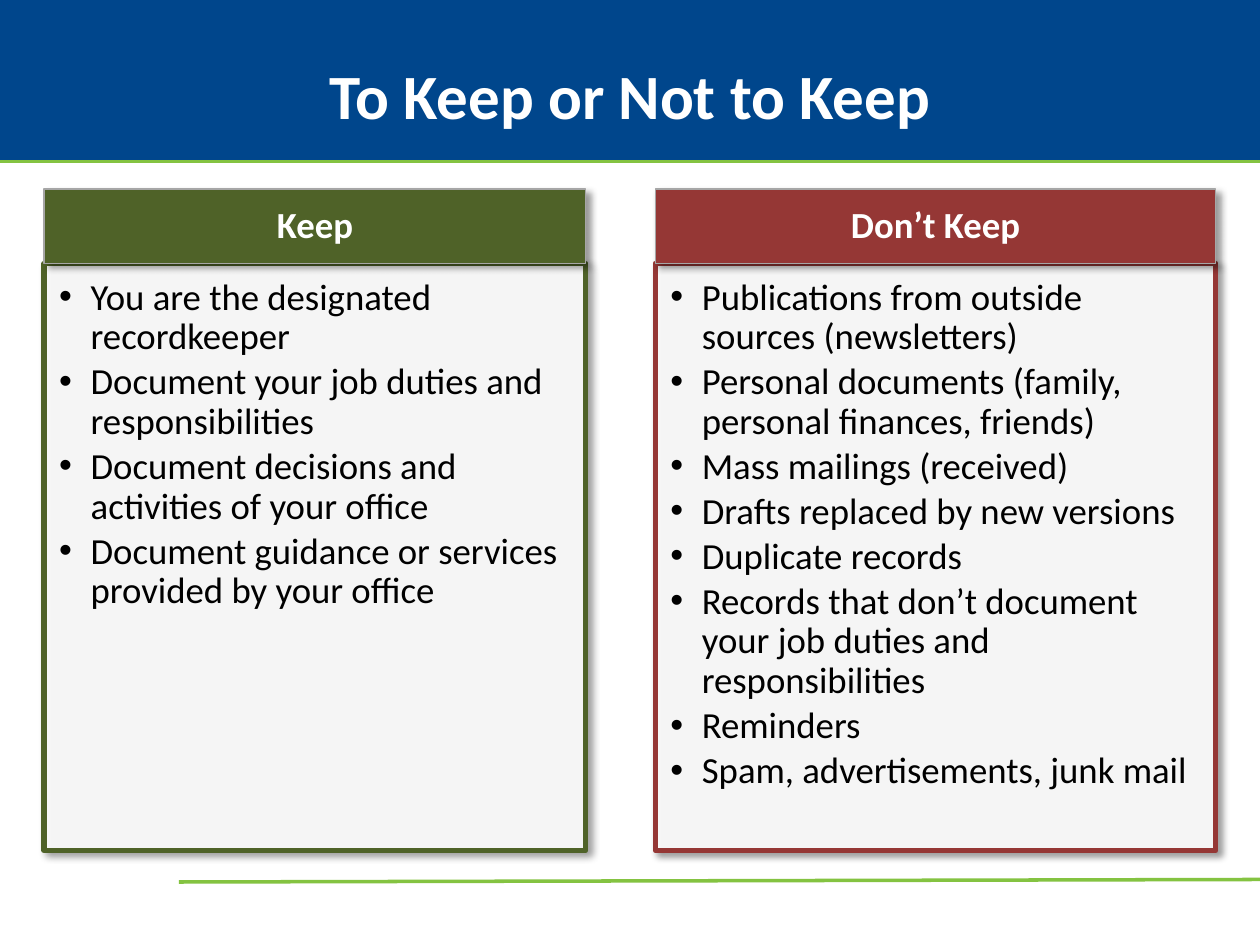
from dataclasses import dataclass

from lxml.etree import SubElement
from pptx import Presentation
from pptx.dml.color import RGBColor
from pptx.enum.shapes import MSO_CONNECTOR, MSO_SHAPE
from pptx.enum.text import MSO_ANCHOR, PP_ALIGN
from pptx.oxml.ns import qn
from pptx.util import Inches, Pt


@dataclass(frozen=True)
class Theme:
    font: str = "Calibri"
    title_size: int = 36
    text_size: int = 21
    navy: str = "00468C"
    lime: str = "84C341"
    olive: str = "4F6228"
    brick: str = "953735"
    grey: str = "A6A6A6"
    white: str = "FFFFFF"
    black: str = "000000"


THEME = Theme()
WIDTH, HEIGHT = 10, 7.5
HEAD_TOP, BODY_TOP, BODY_END = 1.5, 2.09, 6.75
COLUMNS = [
    (0.35, 4.3, THEME.olive, "Keep", [
        "You are the designated recordkeeper",
        "Document your job duties and responsibilities",
        "Document decisions and activities of your office",
        "Document guidance or services provided by your office",
    ]),
    (5.2, 4.45, THEME.brick, "Don’t Keep", [
        "Publications from outside sources (newsletters)",
        "Personal documents (family, personal finances, friends)",
        "Mass mailings (received)",
        "Drafts replaced by new versions",
        "Duplicate records",
        "Records that don’t document your job duties and responsibilities",
        "Reminders",
        "Spam, advertisements, junk mail",
    ]),
]


def apply(target, values):
    for name, value in values.items():
        setattr(target, name, value)


def add_text(p, text, size, color, bold=False):
    r = p.add_run()
    r.text = text
    apply(r.font, {"name": THEME.font, "size": Pt(size), "bold": bold})
    r.font.color.rgb = RGBColor.from_string(color)


def set_frame(tf, anchor, insets):
    sides = ("margin_left", "margin_top", "margin_right", "margin_bottom")
    apply(tf, dict(zip(sides, map(Inches, insets))))
    apply(tf, {"word_wrap": True, "vertical_anchor": anchor})


def set_line(line, color, width):
    line.color.rgb = RGBColor.from_string(color)
    line.width = Pt(width)


def add_rule(s, x1, y1, x2, y2):
    ln = s.shapes.add_connector(MSO_CONNECTOR.STRAIGHT, *map(Inches, (x1, y1, x2, y2)))
    set_line(ln.line, THEME.lime, 2)
    SubElement(ln._element.spPr, qn("a:effectLst"))


def add_box(s, x, y, w, h, fill):
    sp = s.shapes.add_shape(MSO_SHAPE.RECTANGLE, *map(Inches, (x, y, w, h)))
    sp.shadow.inherit = False
    sp.fill.solid()
    sp.fill.fore_color.rgb = RGBColor.from_string(fill)
    return sp


def add_alpha(color, percent):
    SubElement(color, qn("a:alpha"), val=str(percent * 1000))


def add_shadow(sp):
    effects = sp._element.spPr.find(qn("a:effectLst"))
    shadow = SubElement(effects, qn("a:outerShdw"), blurRad=str(Pt(4)), dist=str(Pt(3)),
                        dir=str(45 * 60000), algn="tl", rotWithShape="0")
    add_alpha(SubElement(shadow, qn("a:srgbClr"), val=THEME.black), 40)


def add_bullet(p):
    pPr = p._p.get_or_add_pPr()
    pPr.set("marL", str(Inches(0.25)))
    pPr.set("indent", str(-Inches(0.25)))
    SubElement(pPr, qn("a:buFont"), typeface="Arial")
    SubElement(pPr, qn("a:buChar"), char="•")


def add_body(s, x, w, color, items):
    sp = add_box(s, x, BODY_TOP, w, BODY_END - BODY_TOP, THEME.white)
    add_alpha(sp._element.spPr.find(qn("a:solidFill"))[0], 90)
    set_line(sp.line, color, 3)
    add_shadow(sp)
    tf = sp.text_frame
    set_frame(tf, MSO_ANCHOR.TOP, (0.12, 0.12, 0.16, 0.18))
    for i, item in enumerate(items):
        p = tf.add_paragraph() if i else tf.paragraphs[0]
        add_bullet(p)
        apply(p, {"alignment": PP_ALIGN.LEFT, "line_spacing": 0.9, "space_after": Pt(3)})
        add_text(p, item, THEME.text_size, THEME.black)


def add_header(s, x, w, color, label):
    sp = add_box(s, x, HEAD_TOP, w, BODY_TOP - HEAD_TOP, color)
    set_line(sp.line, THEME.grey, 0.75)
    add_shadow(sp)
    set_frame(sp.text_frame, MSO_ANCHOR.MIDDLE, (0.16, 0.09, 0.16, 0.09))
    p = sp.text_frame.paragraphs[0]
    apply(p, {"alignment": PP_ALIGN.CENTER, "line_spacing": 0.9})
    add_text(p, label, THEME.text_size, THEME.white, bold=True)


def add_title(s, text):
    title = s.shapes.title
    s.shapes._spTree.append(title._element)
    apply(title, {"left": Inches(0.25), "top": Inches(0.25),
                  "width": Inches(WIDTH - 0.5), "height": Inches(1)})
    set_frame(title.text_frame, MSO_ANCHOR.MIDDLE, (0.1, 0.05, 0.1, 0.05))
    p = title.text_frame.paragraphs[0]
    p.alignment = PP_ALIGN.CENTER
    add_text(p, text, THEME.title_size, THEME.white, bold=True)


def main():
    prs = Presentation()
    apply(prs, {"slide_width": Inches(WIDTH), "slide_height": Inches(HEIGHT)})
    s = prs.slides.add_slide(prs.slide_layouts[5])
    add_rule(s, 1.42, 7, WIDTH, 6.98)
    band = add_box(s, 0, -0.02, WIDTH, 1.3, THEME.navy)
    band.line.fill.background()
    add_rule(s, 0, 1.28, WIDTH, 1.28)
    add_title(s, "To Keep or Not to Keep")
    for x, w, color, label, items in COLUMNS:
        add_body(s, x, w, color, items)
        add_header(s, x, w, color, label)
    prs.save("out.pptx")


if __name__ == "__main__":
    main()
